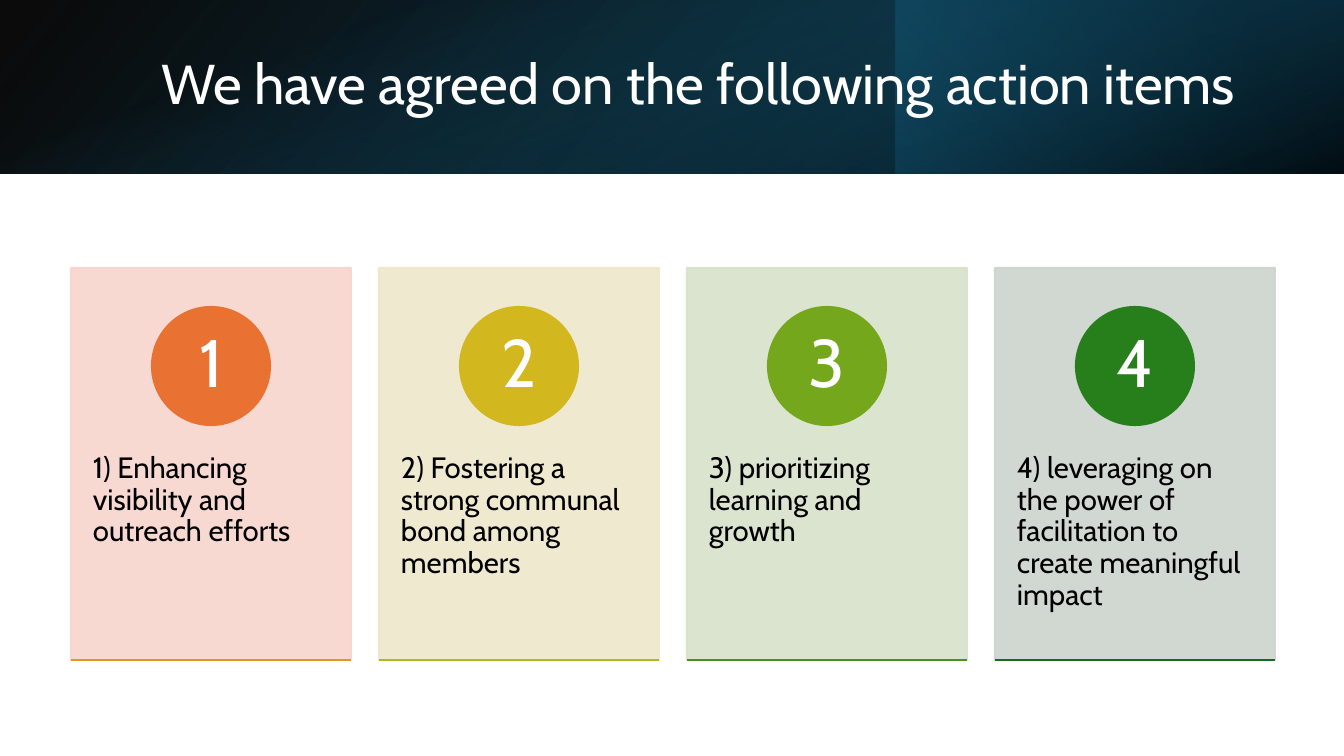
from pptx import Presentation
from pptx.dml.color import RGBColor as RGB
from pptx.enum.shapes import MSO_CONNECTOR as LINE, MSO_SHAPE as SHAPE
from pptx.enum.text import MSO_ANCHOR as ANCHOR, PP_ALIGN as ALIGN
from pptx.oxml import parse_xml
from pptx.oxml.ns import nsdecls, qn
from pptx.util import Pt
from lxml import etree

PX = 914400 / 100.8
COLORS = {
    "white": "FFFFFF", "black": "000000",
    "deep": "104862", "night": "0B3041", "teal": "156082",
}


def px(*lengths):
    return [round(length * PX) for length in lengths]


def write(shape, text, size, color, insets, align=ALIGN.LEFT, anchor=ANCHOR.MIDDLE):
    frame = shape.text_frame
    frame.text = text
    frame.word_wrap = True
    frame.vertical_anchor = anchor
    side, end = px(*insets)
    frame.margin_left = frame.margin_right = side
    frame.margin_top = frame.margin_bottom = end
    paragraph = frame.paragraphs[0]
    paragraph.alignment = align
    paragraph.line_spacing = 0.9
    font = paragraph.runs[0].font
    font.name, font.size = "Cabin", Pt(size)
    font.color.rgb = RGB.from_string(COLORS[color])


prs = Presentation()
prs.slide_width, prs.slide_height = px(1344, 756)
slide = prs.slides.add_slide(prs.slide_layouts[6])
shapes = slide.shapes

# Header band: three gradients laid over each other
# box, rotation, mirrored, angle, stops (position %, color, opacity %)
header_layers = [
    ((0, 0, 1344, 174), 0, True, 140, [(0, "black", 96), (100, "deep", 100)]),
    ((896, 0, 448, 174), 180, False, 320, [(19, "night", 68), (100, "teal", 79)]),
    ((585, -585, 174, 1344), 90, False, 340, [(23, "teal", 0), (99, "black", 74)]),
]
for box, rotation, mirrored, angle, stops in header_layers:
    layer = shapes.add_shape(SHAPE.RECTANGLE, *px(*box))
    layer.shadow.inherit = False
    layer.line.fill.background()
    layer.rotation = rotation
    properties = layer._element.spPr
    if mirrored:
        properties.find(qn("a:xfrm")).set("flipH", "1")
    stop_xml = "".join(
        f'<a:gs pos="{pos * 1000}"><a:srgbClr val="{COLORS[color]}">'
        f'<a:alpha val="{opacity * 1000}"/></a:srgbClr></a:gs>'
        for pos, color, opacity in stops
    )
    properties.find(qn("a:prstGeom")).addnext(parse_xml(
        f'<a:gradFill {nsdecls("a")} rotWithShape="1"><a:gsLst>{stop_xml}</a:gsLst>'
        f'<a:lin ang="{angle * 60000}" scaled="0"/></a:gradFill>'
    ))

# Title
title = shapes.add_textbox(*px(151, 38, 1107, 97))
write(title, "We have agreed on the following action items", 40, "white", (10, 5))

# Action item cards: text, card color, circle color, base line color
action_items = [
    ("1) Enhancing visibility and outreach efforts", "F7D5CE", "E97132", "E49622"),
    ("2) Fostering a strong communal bond among members", "EEE7CB", "D2B81E", "ABBC1E"),
    ("3) prioritizing learning and growth", "D8E2CA", "75A71D", "49931D"),
    ("4) leveraging on the power of facilitation to create meaningful impact",
     "CCD4CD", "277F1B", "196B24"),
]
CARD_LEFT, CARD_TOP, CARD_WIDTH, CARD_HEIGHT, PITCH = 71, 268, 280, 392, 308
CIRCLE = 118

for index, (item, card_color, circle_color, base_color) in enumerate(action_items):
    left = CARD_LEFT + index * PITCH
    bottom = CARD_TOP + CARD_HEIGHT

    card = shapes.add_shape(SHAPE.RECTANGLE, *px(left, CARD_TOP, CARD_WIDTH, CARD_HEIGHT))
    circle_left = left + (CARD_WIDTH - CIRCLE) // 2
    circle = shapes.add_shape(SHAPE.OVAL, *px(circle_left, 307, CIRCLE, CIRCLE))
    for part, color in ((card, card_color), (circle, circle_color)):
        part.shadow.inherit = False
        part.fill.solid()
        part.fill.fore_color.rgb = RGB.from_string(color)
        part.line.color.rgb = RGB.from_string(color)
        part.line.width = Pt(1.5)
    # Card fill and outline are slightly transparent
    for color_node in card._element.spPr.iter(qn("a:srgbClr")):
        etree.SubElement(color_node, qn("a:alpha")).set("val", "90000")
    write(circle, str(index + 1), 48, "white", (9, 1), ALIGN.CENTER)

    description = shapes.add_textbox(*px(left, 417, CARD_WIDTH, 235))
    write(description, item, 21, "black", (22, 36), anchor=ANCHOR.TOP)

    base = shapes.add_connector(LINE.STRAIGHT, *px(left, bottom, left + CARD_WIDTH, bottom))
    base.line.color.rgb = RGB.from_string(base_color)
    base.line.width = Pt(1.5)
    etree.SubElement(base._element.spPr, qn("a:effectLst"))

prs.save("out.pptx")
